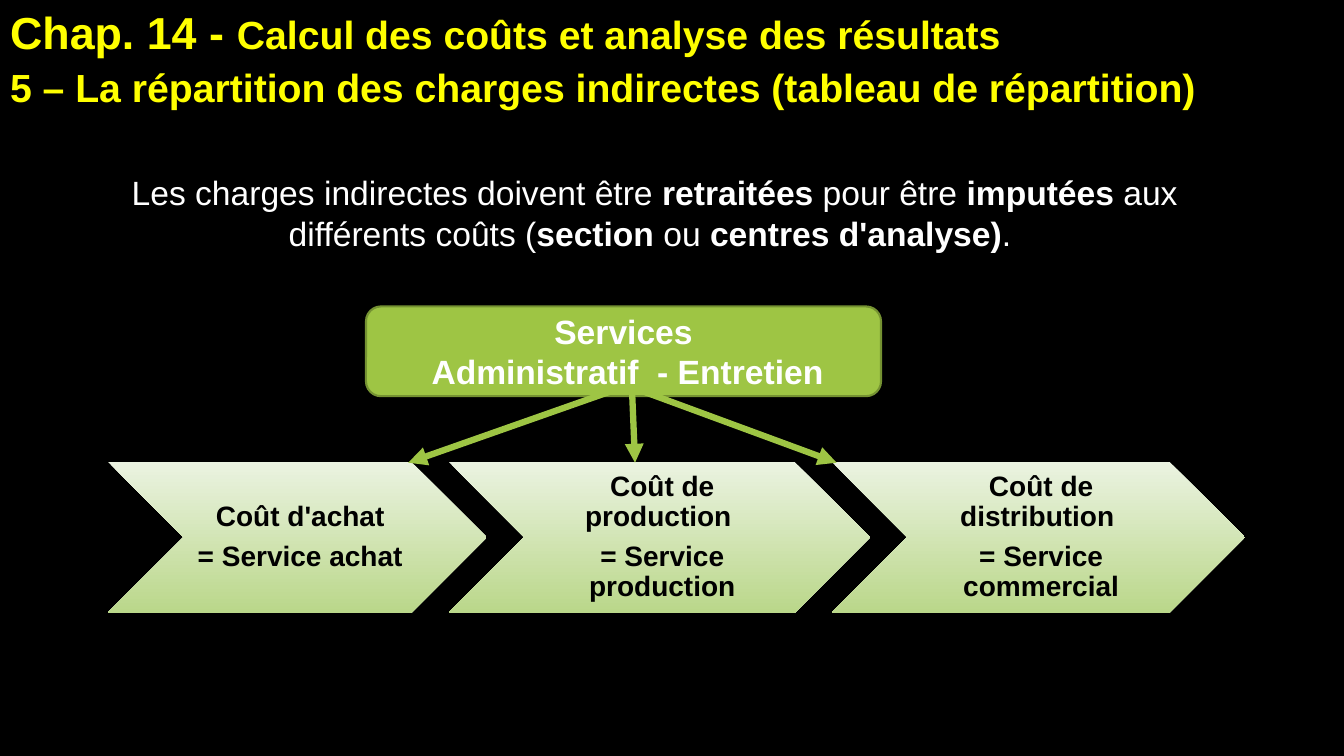
"""Build the slide on sharing out indirect costs between analysis centres."""
from dataclasses import dataclass

from lxml import etree
from pptx import Presentation
from pptx.dml.color import RGBColor
from pptx.enum.shapes import MSO_CONNECTOR, MSO_SHAPE
from pptx.enum.text import MSO_ANCHOR, MSO_AUTO_SIZE, PP_ALIGN
from pptx.oxml.ns import qn
from pptx.slide import Slide
from pptx.text.text import TextFrame, _Paragraph
from pptx.util import Pt

BLACK = RGBColor(0x00, 0x00, 0x00)
WHITE = RGBColor(0xFF, 0xFF, 0xFF)
YELLOW = RGBColor(0xFF, 0xFF, 0x00)
GREEN = RGBColor(0x9E, 0xC5, 0x44)
DARK_GREEN = RGBColor(0x75, 0x92, 0x32)
PALE_GREEN = RGBColor(0xEB, 0xF3, 0xE1)
SOFT_GREEN = RGBColor(0xBA, 0xD7, 0x8A)

CENTER = PP_ALIGN.CENTER
LEFT = PP_ALIGN.LEFT
TOP = MSO_ANCHOR.TOP
MIDDLE = MSO_ANCHOR.MIDDLE
FIT_SHAPE = MSO_AUTO_SIZE.SHAPE_TO_FIT_TEXT
CHEVRON = MSO_SHAPE.CHEVRON
ROUNDED = MSO_SHAPE.ROUNDED_RECTANGLE
STRAIGHT = MSO_CONNECTOR.STRAIGHT

FONT = "Arial"
TITLE_ONLY = 5
COST_TOP = 329.8
COST_HEIGHT = 108
ARROW_END = 330.5


@dataclass(frozen=True)
class Cost:
    """A cost with the service that bears it."""
    left: float
    width: float
    name: str
    service: str


@dataclass(frozen=True)
class Allocation:
    """An arrow from the shared services to a cost."""
    start_x: float
    start_y: float
    end_x: float


COSTS = (
    Cost(77, 270.7, "Coût d'achat", "= Service achat"),
    Cost(320.4, 301, "Coût de production ", "= Service production"),
    Cost(594, 295.2, "Coût de distribution ", "= Service commercial"),
)
ALLOCATIONS = (
    Allocation(445, 276.5, 291.6),
    Allocation(452.9, 277.2, 597.6),
    Allocation(451.4, 277.2, 453.6),
)
INTRO = (
    ("Les charges indirectes doivent être ", False),
    ("retraitées", True),
    (" pour être ", False),
    ("imputées", True),
    (" aux différents coûts (", False),
    ("section", True),
    (" ou ", False),
    ("centres d'analyse)", True),
    (". ", False),
)


def format_paragraph(paragraph: _Paragraph, size: float, color: RGBColor,
                     bold: bool, align: PP_ALIGN) -> None:
    """Set the font and alignment of a paragraph."""
    paragraph.alignment = align
    paragraph.font.name = FONT
    paragraph.font.size = Pt(size)
    paragraph.font.bold = bold
    paragraph.font.color.rgb = color


def write_lines(frame: TextFrame, lines: tuple[str, ...], size: float,
                color: RGBColor, align: PP_ALIGN) -> None:
    """Write bold lines, one paragraph each."""
    frame.word_wrap = True
    frame.text = "\n".join(lines)
    for paragraph in frame.paragraphs:
        format_paragraph(paragraph, size, color, True, align)


def add_heading(slide: Slide) -> None:
    """Fill the title with the chapter and the section."""
    heading = slide.shapes.title
    heading.left, heading.top = Pt(0), Pt(0)
    heading.width, heading.height = Pt(877), Pt(82.8)
    frame = heading.text_frame
    frame.vertical_anchor = TOP
    write_lines(frame, (
        "Chap. 14 - ",
        "5 – La répartition des charges indirectes (tableau de répartition)",
    ), 28, YELLOW, LEFT)
    frame.auto_size = FIT_SHAPE
    chapter = frame.paragraphs[0]
    chapter.runs[0].font.size = Pt(32)
    chapter.add_run().text = "Calcul des coûts et analyse des résultats"
    for paragraph in frame.paragraphs:
        paragraph.space_after = Pt(3)


def add_intro(slide: Slide) -> None:
    """Add the sentence on indirect costs."""
    intro = slide.shapes.add_textbox(Pt(37.4), Pt(119.5), Pt(860.4), Pt(65.5))
    frame = intro.text_frame
    frame.word_wrap = True
    frame.auto_size = FIT_SHAPE
    sentence = frame.paragraphs[0]
    format_paragraph(sentence, 24, WHITE, False, CENTER)
    for words, bold in INTRO:
        run = sentence.add_run()
        run.text = words
        if bold:
            run.font.bold = True


def add_cost(slide: Slide, cost: Cost) -> None:
    """Add a chevron that names a cost and its service."""
    chevron = slide.shapes.add_shape(
        CHEVRON, Pt(cost.left), Pt(COST_TOP), Pt(cost.width), Pt(COST_HEIGHT))
    chevron.shadow.inherit = False
    chevron.line.fill.background()
    chevron.fill.gradient()
    chevron.fill.gradient_angle = 270
    for stop, color in zip(chevron.fill.gradient_stops, (PALE_GREEN, SOFT_GREEN)):
        stop.color.rgb = color
    frame = chevron.text_frame
    frame.vertical_anchor = MIDDLE
    frame.margin_left = Pt(6.5)
    frame.margin_top = frame.margin_right = frame.margin_bottom = Pt(2.2)
    write_lines(frame, (cost.name, cost.service), 20, BLACK, CENTER)
    for paragraph in frame.paragraphs:
        paragraph.line_spacing = 0.9
        paragraph.space_after = Pt(7)


def add_services(slide: Slide) -> None:
    """Add the box of shared services."""
    services = slide.shapes.add_shape(
        ROUNDED, Pt(261.4), Pt(218.9), Pt(367.9), Pt(64.1))
    services.shadow.inherit = False
    services.fill.solid()
    services.fill.fore_color.rgb = GREEN
    services.line.color.rgb = DARK_GREEN
    services.line.width = Pt(1.5)
    services.text_frame.vertical_anchor = MIDDLE
    write_lines(services.text_frame, ("Services", " Administratif  - Entretien"),
                24, WHITE, CENTER)


def add_allocation(slide: Slide, allocation: Allocation) -> None:
    """Add an arrow down to a cost."""
    arrow = slide.shapes.add_connector(
        STRAIGHT, Pt(allocation.start_x), Pt(allocation.start_y),
        Pt(allocation.end_x), Pt(ARROW_END))
    arrow.line.color.rgb = GREEN
    arrow.line.width = Pt(4.5)
    properties = arrow.element.spPr
    etree.SubElement(properties.find(qn("a:ln")), qn("a:tailEnd"), type="triangle")
    etree.SubElement(properties, qn("a:effectLst"))


def main() -> None:
    """Build and save the presentation."""
    deck = Presentation()
    deck.slide_width, deck.slide_height = Pt(960), Pt(540)
    slide = deck.slides.add_slide(deck.slide_layouts[TITLE_ONLY])
    slide.background.fill.solid()
    slide.background.fill.fore_color.rgb = BLACK
    add_heading(slide)
    add_intro(slide)
    for cost in COSTS:
        add_cost(slide, cost)
    add_services(slide)
    for allocation in ALLOCATIONS:
        add_allocation(slide, allocation)
    deck.save("out.pptx")


if __name__ == "__main__":
    main()
